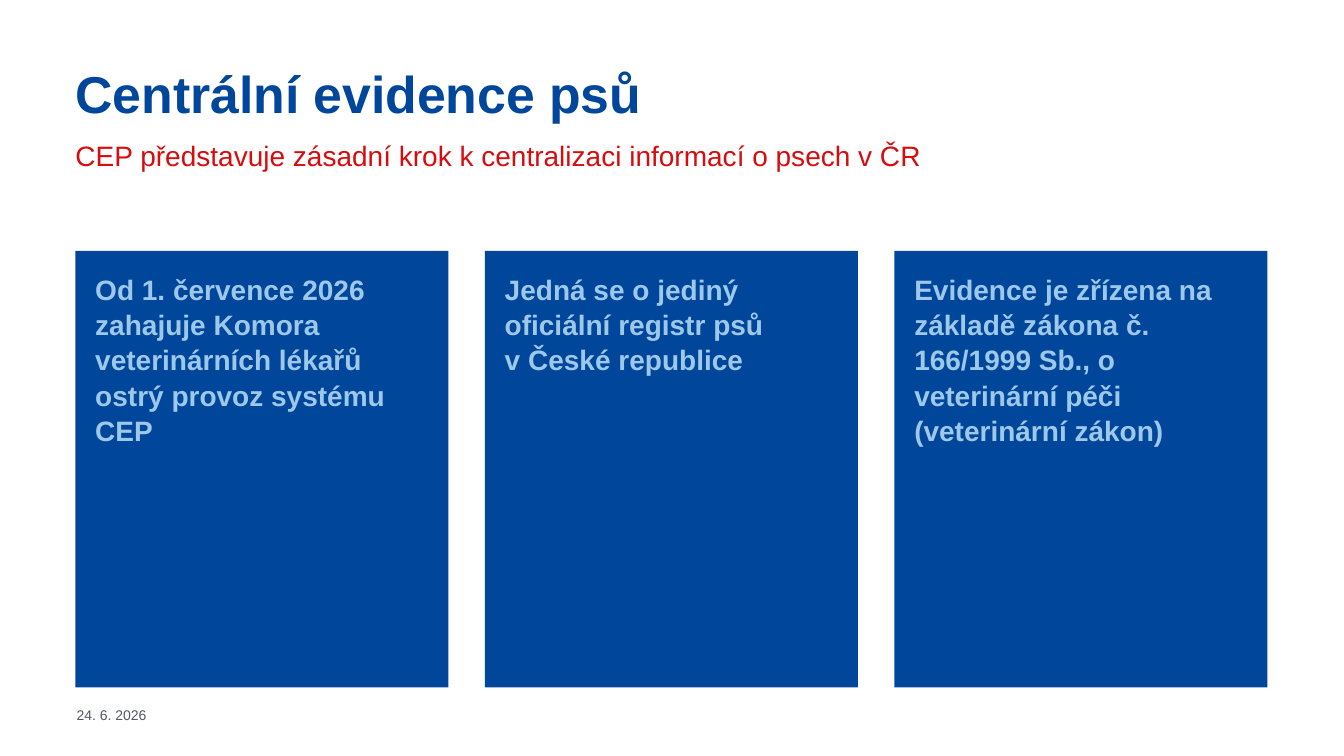
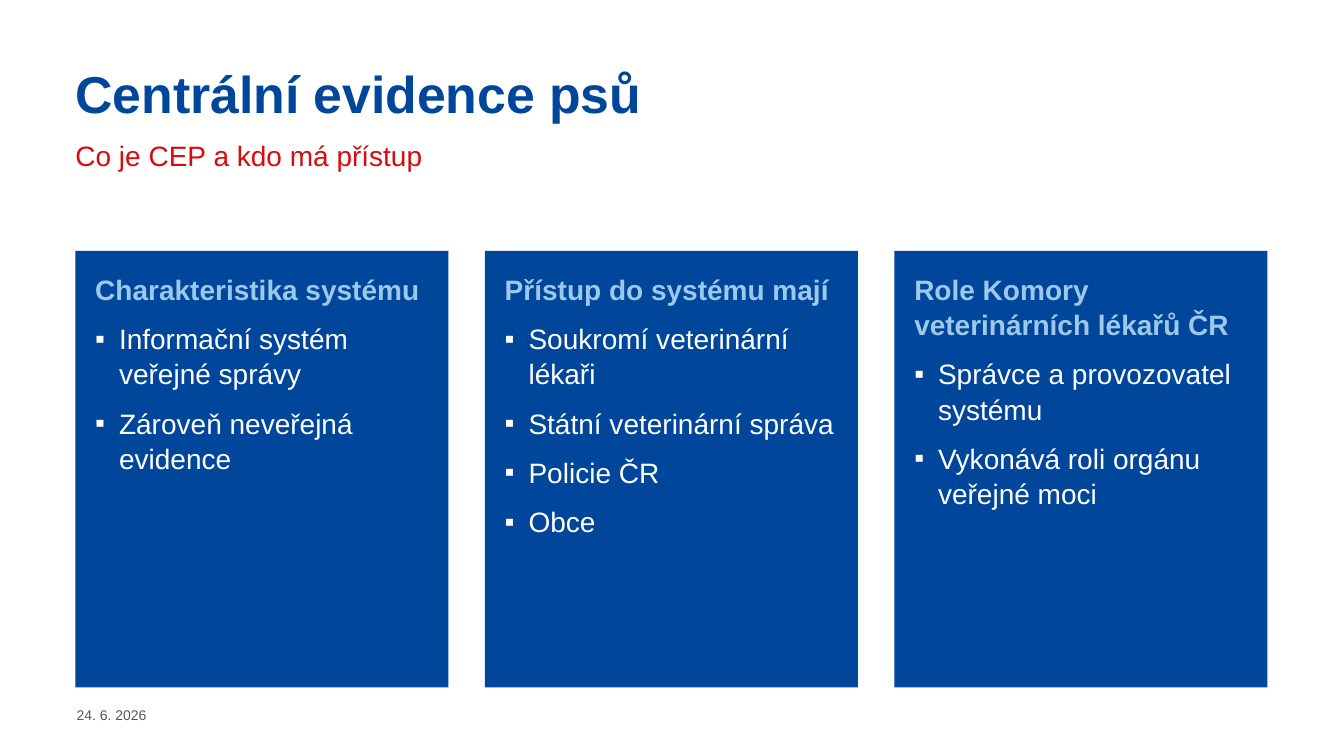
"""Build two slides about the central register of dogs."""
from lxml.etree import SubElement
from pptx import Presentation
from pptx.dml.color import RGBColor
from pptx.enum.text import MSO_ANCHOR as Anchor, MSO_AUTO_SIZE as AutoSize, PP_ALIGN as Align
from pptx.oxml.ns import qn
from pptx.util import Cm, Pt

FONT = "Arial"
BLUE, RED, LIGHT_BLUE, WHITE, GREY = "00469B", "D70C0F", "9EC8E9", "FFFFFF", "545860"
TITLE = "Centrální evidence psů"
DATE = "24. 6. 2026"
COMPARISON_LAYOUT = 4
LEFT, HEADER_WIDTH = 1.9, 27.5
CARD_TOP, CARD_WIDTH, CARD_HEIGHT, CARD_GAP = 6.32, 9.4, 11, 1
CARD_PITCH = CARD_WIDTH + CARD_GAP
CARD_PITCH = 10.32
BULLET_INDENT = 0.6

SLIDES = [
    ("CEP představuje zásadní krok k centralizaci informací o psech v ČR", [
        ("Od 1. července 2026 zahajuje Komora veterinárních lékařů ostrý provoz systému CEP", []),
        ("Jedná se o jediný oficiální registr psů\nv České republice", []),
        ("Evidence je zřízena na základě zákona č. 166/1999 Sb., o veterinární péči "
         "(veterinární zákon)", []),
    ]),
    ("Co je CEP a kdo má přístup", [
        ("Charakteristika systému",
         ["Informační systém veřejné správy", "Zároveň neveřejná evidence"]),
        ("Přístup do systému mají",
         ["Soukromí veterinární lékaři", "Státní veterinární správa", "Policie ČR", "Obce"]),
        ("Role Komory veterinárních lékařů ČR",
         ["Správce a provozovatel systému", "Vykonává roli orgánu veřejné moci"]),
    ]),
]


def color(hex_text):
    """Return the colour for a hex string."""
    return RGBColor.from_string(hex_text)


def place(shape, left, top, width, height):
    """Position a shape, with lengths in centimetres."""
    shape.left, shape.top, shape.width, shape.height = map(Cm, (left, top, width, height))


def prepare_frame(shape, insets=(0, 0, 0, 0), anchor=Anchor.TOP):
    """Set wrapping, anchor and insets, and return the text frame."""
    frame = shape.text_frame
    frame.word_wrap = True
    frame.auto_size = AutoSize.NONE
    frame.vertical_anchor = anchor
    frame.margin_left, frame.margin_top, frame.margin_right, frame.margin_bottom = map(Cm, insets)
    return frame


def set_bullet(paragraph, symbol=None):
    """Give a paragraph a hanging bullet, or none at all."""
    properties = paragraph._p.get_or_add_pPr()
    indent = Cm(BULLET_INDENT) if symbol else 0
    properties.set("marL", str(indent))
    properties.set("indent", str(-indent))
    if symbol:
        SubElement(properties, qn("a:buChar")).set("char", symbol)
    else:
        SubElement(properties, qn("a:buNone"))


def write(paragraph, text, size, hex_text, bold=False, bullet=None, spacing=1.05, after=10):
    """Format a paragraph and add its text, one run for each line."""
    set_bullet(paragraph, bullet)
    paragraph.alignment = Align.LEFT
    paragraph.line_spacing = spacing
    paragraph.space_before, paragraph.space_after = Pt(0), Pt(after)
    for number, line in enumerate(text.split("\n")):
        if number:
            paragraph.add_line_break()
        run = paragraph.add_run()
        run.text = line
        run.font.name, run.font.size, run.font.bold = FONT, Pt(size), bold
        run.font.color.rgb = color(hex_text)


def add_header(title, subtitle, subtitle_text):
    """Fill the title and the subtitle."""
    place(title, LEFT, 1.73, HEADER_WIDTH, 1.68)
    write(prepare_frame(title).paragraphs[0], TITLE, 37, BLUE, bold=True, spacing=0.9, after=0)
    place(subtitle, LEFT, 3.45, HEADER_WIDTH, 2.13)
    write(prepare_frame(subtitle).paragraphs[0], subtitle_text, 20, RED)


def add_card(card, column, heading, items):
    """Turn a body placeholder into a blue card with a heading and a list."""
    place(card, LEFT + column * CARD_PITCH, CARD_TOP, CARD_WIDTH, CARD_HEIGHT)
    card.fill.solid()
    card.fill.fore_color.rgb = color(BLUE)
    frame = prepare_frame(card, (0.5, 0.5, 0.4, 0.2))
    write(frame.paragraphs[0], heading, 20, LIGHT_BLUE, bold=True)
    for item in items:
        paragraph = frame.add_paragraph()
        paragraph.level = 1
        write(paragraph, item, 20, WHITE, bullet="▪")


def add_date(slide):
    """Add the date at the foot of a slide."""
    box = slide.shapes.add_textbox(0, 0, 0, 0)
    place(box, 1.93, 17.5, 13, 1.02)
    frame = prepare_frame(box, (0, 0.1, 0, 0.1), Anchor.MIDDLE)
    write(frame.paragraphs[0], DATE, 10, GREY, spacing=1, after=0)


def add_slide(presentation, subtitle_text, cards):
    """Add a slide with a header, three cards and the date."""
    slide = presentation.slides.add_slide(presentation.slide_layouts[COMPARISON_LAYOUT])
    title, subtitle, *bodies = slide.placeholders
    add_header(title, subtitle, subtitle_text)
    for column, (body, (heading, items)) in enumerate(zip(bodies, cards)):
        add_card(body, column, heading, items)
    add_date(slide)


def main():
    """Build and save the presentation."""
    presentation = Presentation()
    presentation.slide_width, presentation.slide_height = Cm(33.87), Cm(19.05)
    for subtitle_text, cards in SLIDES:
        add_slide(presentation, subtitle_text, cards)
    presentation.save("out.pptx")


if __name__ == "__main__":
    main()
